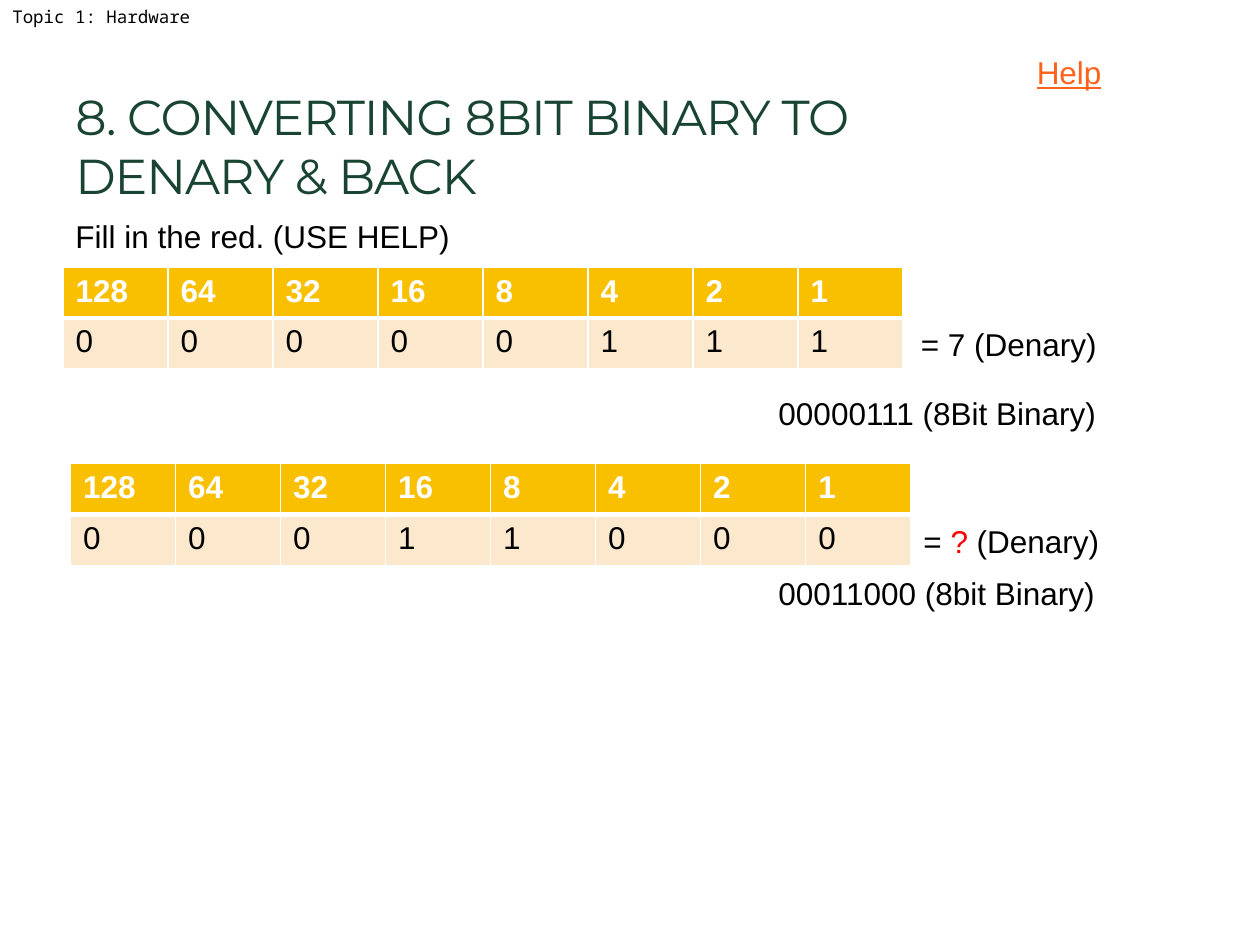
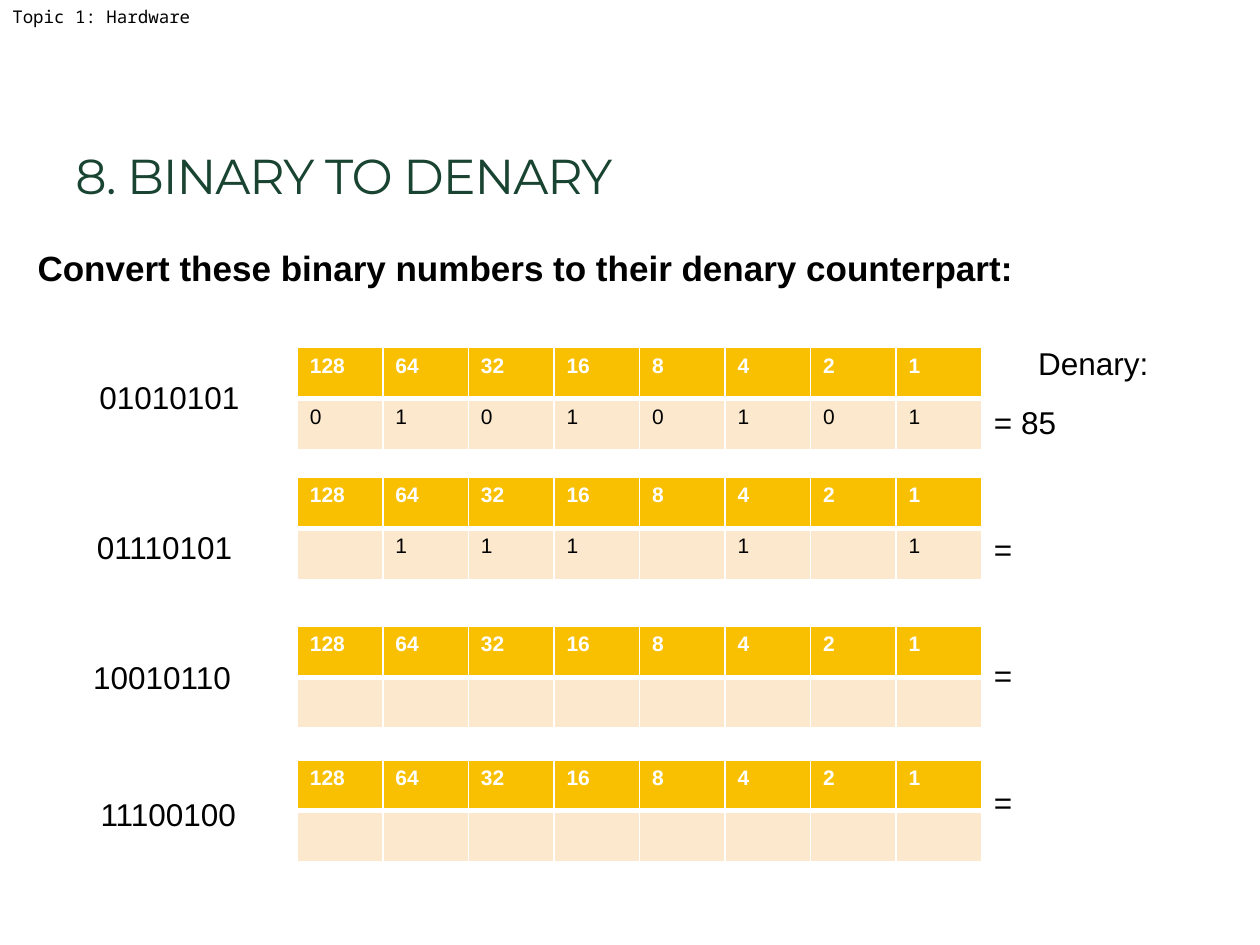
from lxml import etree
from pptx import Presentation
from pptx import util as u
from pptx.dml.color import RGBColor
from pptx.enum import text as t
from pptx.oxml.ns import qn

WIDE, HIGH = u.Inches(10), u.Inches(7.5)
COLS, ROWS = 100, 75  # layout grid of the slide

INK, WHITE, RED = "000000", "FFFFFF", "FF0000"
GREEN, LINK = "194431", "FF621D"
GOLD, CREAM = "F8C000", "FCE8CC"

BODY = dict(name="Arial", size=18, color=INK)
LEAD = dict(BODY, size=20, bold=True)
HELP = dict(BODY, color=LINK, underline=True)
TITLE = dict(name="Montserrat", size=28, color=GREEN)
TOPIC = dict(name="Noto Sans Mono", size=10, color=INK)

POWERS = [2 ** n for n in range(7, -1, -1)]
ROW = 4.05  # table row height in grid rows


def rgb(code):
    return RGBColor.from_string(code)


def at_x(col):
    return round(WIDE * col / COLS)


def at_y(row):
    return round(HIGH * row / ROWS)


def style(font, look):
    for key, val in look.items():
        if key == "color":
            font.color.rgb = rgb(val)
        else:
            setattr(font, key, u.Pt(val) if key == "size" else val)


def write(para, words, look):
    run = para.add_run()
    run.text = words
    style(run.font, look)
    return run


def box(slide, col, row, wide, high, *parts, wrap=False):
    """Add a text box; each part is a pair of words and look."""
    shape = slide.shapes.add_textbox(
        at_x(col), at_y(row), at_x(wide), at_y(high))
    frame = shape.text_frame
    frame.word_wrap = wrap
    frame.auto_size = (t.MSO_AUTO_SIZE.NONE if wrap
                       else t.MSO_AUTO_SIZE.SHAPE_TO_FIT_TEXT)
    for words, look in parts:
        run = write(frame.paragraphs[0], words, look)
    return frame, run


def label(slide, col, row, wide, words, look=BODY):
    box(slide, col, row, wide, 4, (words, look))


def edge(cell, sides):
    """Draw white cell borders from a dict of side and points."""
    props = cell._tc.get_or_add_tcPr()
    for spot, (side, pts) in enumerate(sides.items()):
        line = etree.Element(qn("a:ln" + side), w=str(u.Pt(pts)))
        fill = etree.SubElement(line, qn("a:solidFill"))
        etree.SubElement(fill, qn("a:srgbClr"), val=WHITE)
        props.insert(spot, line)


def bits(slide, col, row, wide, size, digits):
    """Add a place value table; a dash in digits leaves a cell empty."""
    grid = slide.shapes.add_table(
        2, len(POWERS), at_x(col), at_y(row), at_x(wide), at_y(2 * ROW)).table
    head = dict(BODY, size=size, color=WHITE, bold=True)
    data = dict(BODY, size=size, bold=False)
    kinds = [(POWERS, GOLD, head, dict(L=1, R=1, T=1, B=3)),
             (digits, CREAM, data, dict(L=1, R=1, T=3, B=1))]
    for line, (vals, fill, look, sides) in enumerate(kinds):
        for spot, val in enumerate(vals):
            cell = grid.cell(line, spot)
            cell.fill.solid()
            cell.fill.fore_color.rgb = rgb(fill)
            edge(cell, sides)
            if val != "-":
                write(cell.text_frame.paragraphs[0], str(val), look)


def page(deck, title):
    """Add a slide with the topic line and its title."""
    slide = deck.slides.add_slide(deck.slide_layouts[6])
    box(slide, 0, 0, 16.3, 2.7, ("Topic 1: Hardware", TOPIC))
    frame, run = box(slide, 5, 3.3, 63.4, 13.4, (title, TITLE), wrap=True)
    frame.vertical_anchor = t.MSO_ANCHOR.BOTTOM
    run.font._element.set("spc", "-60")
    return slide


def lesson(deck):
    slide = page(deck, "8. CONVERTING 8BIT BINARY TO DENARY & BACK")
    label(slide, 81.3, 3.7, 7.2, "Help", HELP)
    label(slide, 5, 16.7, 32, "Fill in the red. (USE HELP)")

    # Worked example
    bits(slide, 5, 21.2, 66.7, 18, "00000111")
    label(slide, 72.1, 25.3, 16.1, "= 7 (Denary)")
    label(slide, 60.8, 30.8, 27.5, "00000111 (8Bit Binary)")

    # Question
    bits(slide, 5.6, 36.8, 66.7, 18, "00011000")
    box(slide, 72.3, 40.9, 16.1, 4, ("= ", BODY),
        ("?", dict(BODY, color=RED)), (" (Denary)", BODY))
    label(slide, 60.8, 45.1, 27.6, "00011000 (8bit Binary)")


def drill(deck):
    slide = page(deck, "8. BINARY TO DENARY")
    box(slide, 2, 19.1, 83.3, 5, (
        "Convert these binary numbers to their denary counterpart:", LEAD),
        wrap=True)
    label(slide, 81.4, 26.8, 10.9, "Denary:")

    # Number with its column and row, table row and digits, answer
    tasks = [
        ("01010101", 6.9, 29.5, 27.6, "01010101", "= 85"),
        ("01110101", 6.7, 41.4, 37.9, "-111-1-1", "="),
        ("10010110", 6.4, 51.7, 49.7, "--------", "="),
        ("11100100", 7, 62.6, 60.3, "--------", "="),
    ]
    for spot, (number, col, row, top, digits, answer) in enumerate(tasks):
        label(slide, col, row, 13.3, number)
        bits(slide, 23.6, top, 54.3, 12, digits)
        label(slide, 77.9, 31.5 + 10.05 * spot,
              7 if len(answer) > 1 else 3.5, answer)


def main():
    deck = Presentation()
    deck.slide_width, deck.slide_height = WIDE, HIGH
    lesson(deck)
    drill(deck)
    deck.save("out.pptx")


if __name__ == "__main__":
    main()
